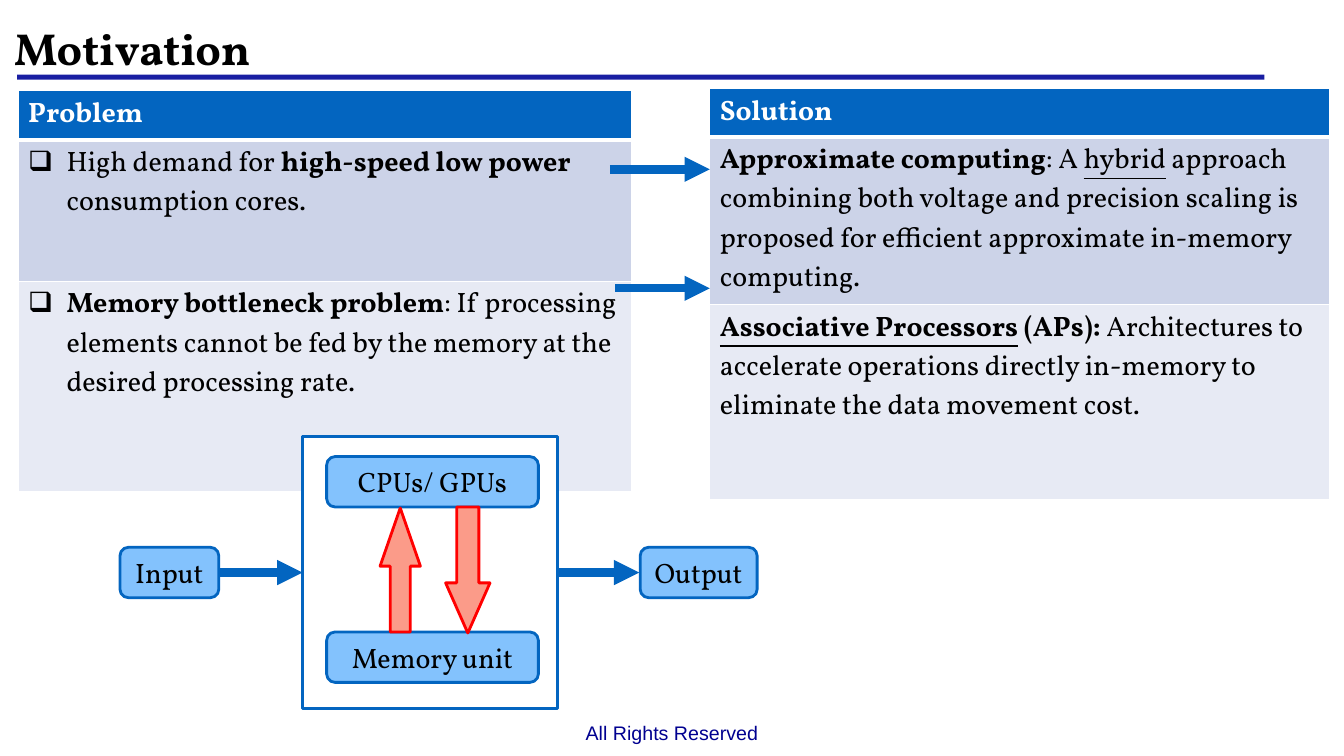
"""Build the Motivation slide with problem and solution tables and a memory bottleneck diagram."""
import pptx
import pptx.util
import pptx.dml.color
import pptx.enum.shapes
import pptx.enum.text
import pptx.oxml
import pptx.oxml.ns
from lxml import etree

Inches = pptx.util.Inches
Pt = pptx.util.Pt
SHAPES = pptx.enum.shapes.MSO_SHAPE
ALIGN = pptx.enum.text.PP_ALIGN
ANCHOR = pptx.enum.text.MSO_ANCHOR

COLORS = {
    "black": "000000", "white": "FFFFFF", "blue": "0365C0", "rule": "191EA2",
    "footer": "000090", "band_dark": "CCD3E8", "band_light": "E7EAF4",
    "node": "83C2FD", "red": "FF0000", "salmon": "FB9B89",
}
FONT = "Vollkorn"
ROW_FILLS = ["blue", "band_dark", "band_light"]

TABLES = [
    {"box": (0.18, 0.9, 6.08), "heights": [0.49, 1.4, 2.09], "bullet": "❑", "rows": [
        [("Problem", "b")],
        [("High demand for ", ""), ("high-speed low power ", "b"), ("consumption cores.", "")],
        [("Memory bottleneck problem", "b"),
         (": If processing elements cannot be fed by the memory at the desired processing rate.", "")],
    ]},
    {"box": (7.04, 0.88, 6.15), "heights": [0.48, 1.66, 1.94], "bullet": None, "rows": [
        [("Solution", "b")],
        [("Approximate computing", "b"), (": A ", ""), ("hybrid", "u"),
         (" approach combining both voltage and precision scaling is proposed "
          "for efficient approximate in-memory computing.", "")],
        [("Associative Processors", "bu"), (" (APs): ", "b"),
         ("Architectures to accelerate operations directly in-memory "
          "to eliminate the data movement cost.", "")],
    ]},
]
FRAME = (3, 4.33, 2.53, 2.7)
NODE_HEIGHT = 0.5
NODES = [
    ("CPUs/ GPUs", 3.24, 4.53, 2.1),
    ("Memory unit", 3.24, 6.27, 2.1),
    ("Output", 6.35, 5.43, 1.16),
    ("Input", 1.19, 5.43, 0.98),
]
BLOCK_ARROWS = [
    (SHAPES.UP_ARROW, (3.77, 5.04, 0.4, 1.23), 1.442),
    (SHAPES.DOWN_ARROW, (4.42, 5.03, 0.44, 1.25), 1.129),
]
ARROWS = [(2.18, 3, 5.68), (5.52, 6.34, 5.68), (6.05, 7.04, 1.68), (6.1, 7.04, 2.86)]


def rgb(name):
    return pptx.dml.color.RGBColor.from_string(COLORS[name])


def add_run(paragraph, text, size, color, style="", font=FONT):
    run = paragraph.add_run()
    run.text = text
    run.font.name = font
    run.font.size = Pt(size)
    run.font.color.rgb = rgb(color)
    run.font.bold = "b" in style
    run.font.underline = "u" in style


def set_frame(frame, margin, anchor):
    frame.word_wrap = True
    frame.vertical_anchor = anchor
    frame.margin_left = frame.margin_right = Inches(margin)
    frame.margin_top = frame.margin_bottom = Inches(margin)
    return frame.paragraphs[0]


def add_text_box(slide, box, margin, anchor):
    text_box = slide.shapes.add_textbox(*map(Inches, box))
    return set_frame(text_box.text_frame, margin, anchor)


def add_box(slide, kind, box, fill, line=None):
    shape = slide.shapes.add_shape(kind, *map(Inches, box))
    shape.shadow.inherit = False
    shape.fill.solid()
    shape.fill.fore_color.rgb = rgb(fill)
    if line:
        shape.line.color.rgb = rgb(line)
        shape.line.width = Pt(2)
    else:
        shape.line.fill.background()
    return shape


def add_arrow(slide, start, end, y):
    arrow = slide.shapes.add_connector(
        pptx.enum.shapes.MSO_CONNECTOR.STRAIGHT, Inches(start), Inches(y), Inches(end), Inches(y))
    arrow.line.color.rgb = rgb("blue")
    arrow.line.width = Pt(6)
    tail = etree.SubElement(arrow.line._get_or_add_ln(), pptx.oxml.ns.qn("a:tailEnd"))
    tail.set("type", "triangle")
    etree.SubElement(arrow._element.spPr, pptx.oxml.ns.qn("a:effectLst"))


def set_borders(cell, widths):
    properties = cell._tc.get_or_add_tcPr()
    for side, width in widths.items():
        properties.append(pptx.oxml.parse_xml(
            f'<a:ln{side} {pptx.oxml.ns.nsdecls("a")} w="{Pt(width)}"><a:solidFill>'
            f'<a:srgbClr val="{COLORS["white"]}"/></a:solidFill></a:ln{side}>'))


def add_bullet(paragraph, character):
    properties = paragraph._p.get_or_add_pPr()
    properties.set("marL", str(Inches(0.38)))
    properties.set("indent", str(Inches(-0.38)))
    etree.SubElement(properties, pptx.oxml.ns.qn("a:buChar")).set("char", character)


def add_table(slide, content):
    left, top, width = content["box"]
    heights = content["heights"]
    table = slide.shapes.add_table(
        len(heights), 1, Inches(left), Inches(top), Inches(width), Inches(sum(heights))).table
    table.first_row = table.horz_banding = False
    for index, (height, runs, fill) in enumerate(zip(heights, content["rows"], ROW_FILLS)):
        table.rows[index].height = Inches(height)
        cell = table.cell(index, 0)
        set_borders(cell, {"L": 1, "R": 1, "T": 3 if index == 1 else 1, "B": 3 if index == 0 else 1})
        cell.fill.solid()
        cell.fill.fore_color.rgb = rgb(fill)
        paragraph = cell.text_frame.paragraphs[0]
        if index and content["bullet"]:
            add_bullet(paragraph, content["bullet"])
        for text, style in runs:
            add_run(paragraph, text, 20, "black" if index else "white", style)


def main():
    presentation = pptx.Presentation()
    presentation.slide_width = Inches(13.33)
    presentation.slide_height = Inches(7.5)
    slide = presentation.slides.add_slide(presentation.slide_layouts[6])

    footer = add_text_box(slide, (0, 7.1, 13.33, 0.34), 0.05, ANCHOR.TOP)
    footer.alignment = ALIGN.CENTER
    add_run(footer, "All Rights Reserved", 14, "footer", font="Arial")
    add_box(slide, SHAPES.RECTANGLE, (0.17, 0.74, 12.37, 0.05), "rule")
    title = add_text_box(slide, (0, 0, 11.97, 0.95), 0.14, ANCHOR.MIDDLE)
    add_run(title, "Motivation", 32, "black", "b")

    for content in TABLES:
        add_table(slide, content)

    add_box(slide, SHAPES.RECTANGLE, FRAME, "white", "blue")
    for label, left, top, width in NODES:
        node = add_box(slide, SHAPES.ROUNDED_RECTANGLE, (left, top, width, NODE_HEIGHT), "node", "blue")
        paragraph = set_frame(node.text_frame, 0.06, ANCHOR.MIDDLE)
        paragraph.alignment = ALIGN.CENTER
        add_run(paragraph, label, 20, "black")
    for kind, box, head in BLOCK_ARROWS:
        block_arrow = add_box(slide, kind, box, "salmon", "red")
        block_arrow.adjustments[0] = 0.5
        block_arrow.adjustments[1] = head
    for start, end, y in ARROWS:
        add_arrow(slide, start, end, y)

    presentation.save("out.pptx")


if __name__ == "__main__":
    main()
